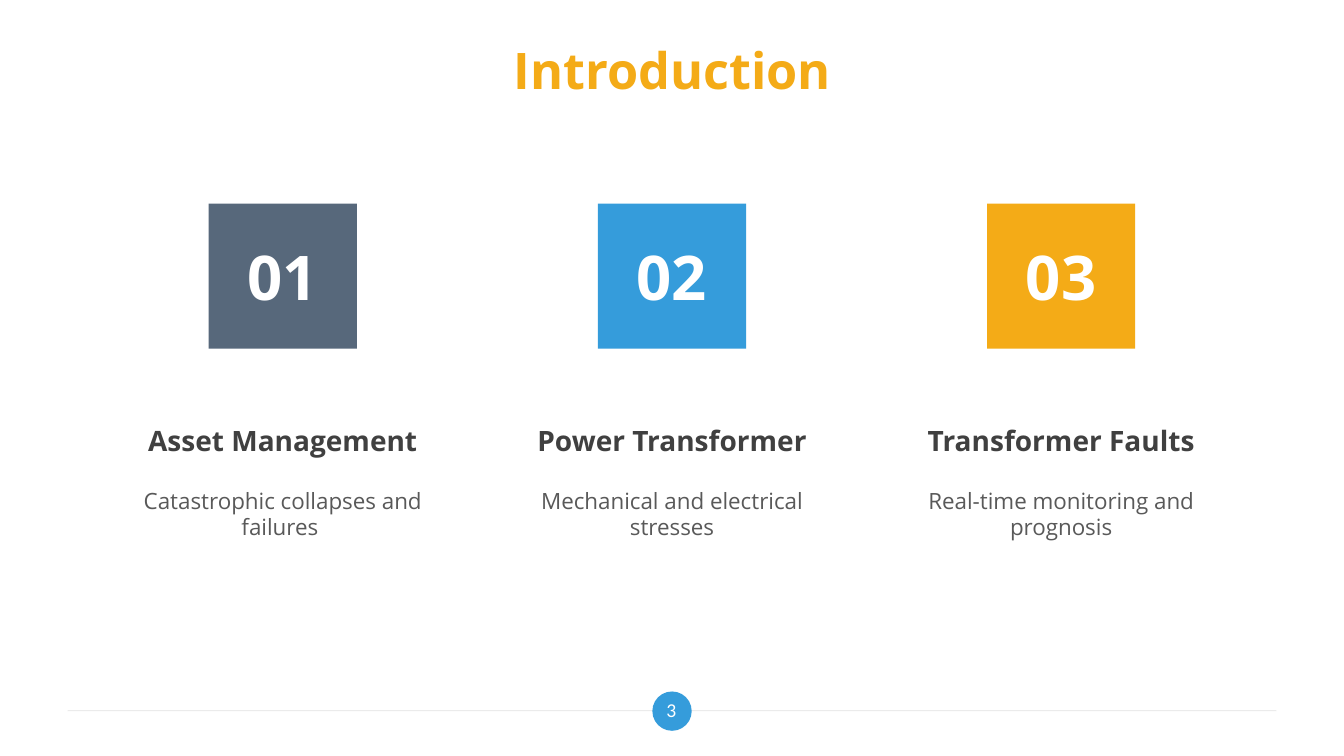
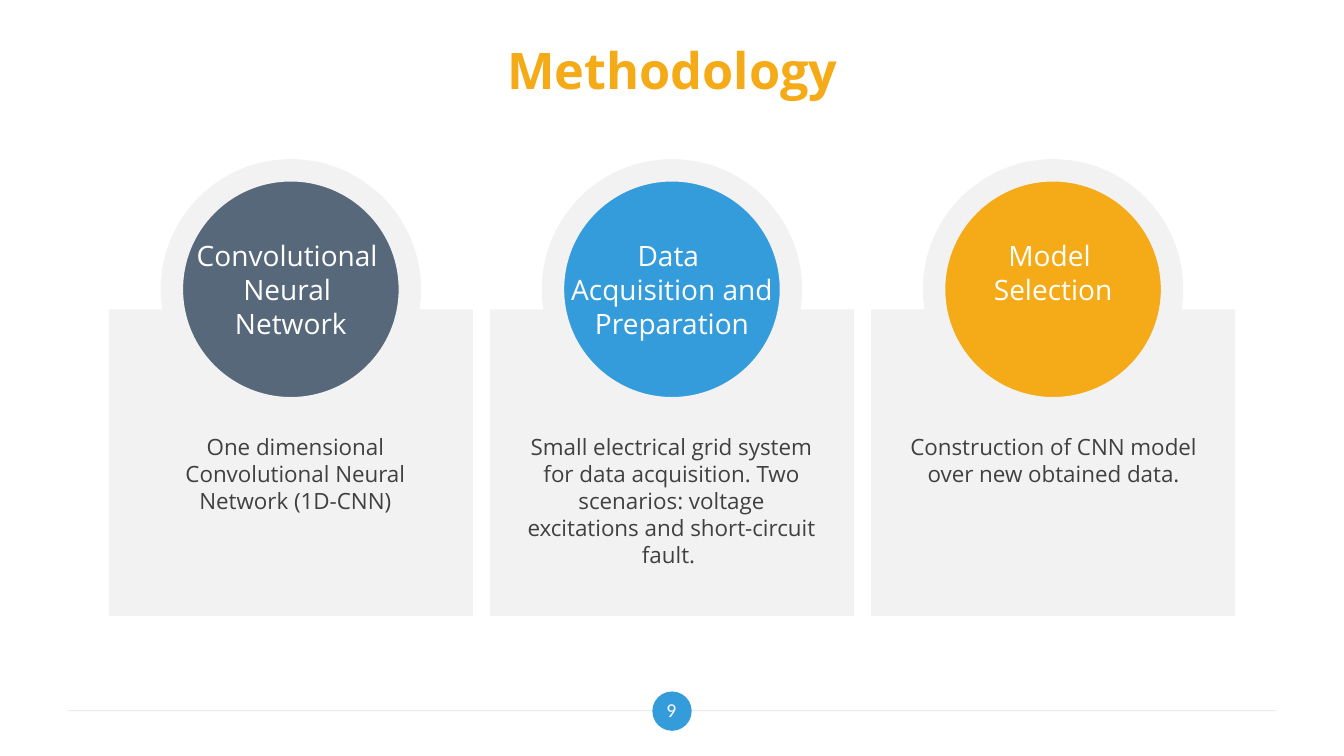
"""Build the introduction and methodology slides."""
from dataclasses import dataclass
from typing import Any

import lxml.etree
import pptx
import pptx.dml.color
import pptx.enum.shapes
import pptx.enum.text
import pptx.oxml.ns
import pptx.util

Inches = pptx.util.Inches
Pt = pptx.util.Pt
MSO_SHAPE = pptx.enum.shapes.MSO_SHAPE
ANCHOR = pptx.enum.text.MSO_ANCHOR
AUTO_SIZE = pptx.enum.text.MSO_AUTO_SIZE
Box = tuple[float, float, float, float]


@dataclass(frozen=True)
class TextStyle:
    size: float
    color: str
    bold: bool = False
    font: str = "Open Sans"


@dataclass(frozen=True)
class Theme:
    accents: tuple[str, ...] = ("57687B", "359CDB", "F4AB17")
    panel: str = "F2F2F2"
    rule: str = "D9D9D9"
    badge: str = "359CDB"
    title: TextStyle = TextStyle(36, "F4AB17", True)
    number: TextStyle = TextStyle(44, "FFFFFF", True)
    heading: TextStyle = TextStyle(20, "404040", True)
    caption: TextStyle = TextStyle(16, "595959")
    label: TextStyle = TextStyle(20, "FFFFFF")
    body: TextStyle = TextStyle(16, "404040")
    page: TextStyle = TextStyle(14, "FFFFFF", font="Calibri")


@dataclass(frozen=True)
class Topic:
    heading: str
    caption: str


@dataclass(frozen=True)
class Step:
    label: tuple[str, ...]
    label_width: float
    body: str
    body_left: float
    body_height: float


THEME = Theme()
WIDE_INSETS = {
    "margin_left": Inches(0.13),
    "margin_right": Inches(0.13),
    "margin_top": Inches(0.07),
    "margin_bottom": Inches(0.07),
    "vertical_anchor": ANCHOR.MIDDLE,
}
GROW = {"auto_size": AUTO_SIZE.SHAPE_TO_FIT_TEXT}

TOPICS = (
    Topic("Asset Management", "Catastrophic collapses and failures "),
    Topic("Power Transformer", "Mechanical and electrical stresses"),
    Topic("Transformer Faults", "Real-time monitoring and prognosis"),
)
STEPS = (
    Step(("Convolutional ", "Neural ", "Network"), 2.08,
         "One dimensional Convolutional Neural Network (1D-CNN)", 1.4, 0.91),
    Step(("Data ", "Acquisition and", "Preparation"), 2.21,
         "Small electrical grid system for data acquisition. Two scenarios: "
         "voltage excitations and short-circuit fault. ", 5.13, 1.45),
    Step(("Model ", "Selection"), 1.39,
         "Construction of CNN model over new obtained data.", 8.92, 0.64),
)


def rgb(color: str) -> pptx.dml.color.RGBColor:
    """Return the colour for a hex string."""
    return pptx.dml.color.RGBColor.from_string(color)


def set_attributes(target: Any, values: dict[str, Any]) -> None:
    """Set every named attribute on the target."""
    for name, value in values.items():
        setattr(target, name, value)


def write(tf: Any, lines: tuple[str, ...], style: TextStyle, **frame: Any) -> None:
    """Write centred paragraphs in one style."""
    set_attributes(tf, {"word_wrap": True, "auto_size": AUTO_SIZE.NONE} | frame)
    for i, line in enumerate(lines):
        p = tf.paragraphs[0] if i == 0 else tf.add_paragraph()
        p.alignment = pptx.enum.text.PP_ALIGN.CENTER
        r = p.add_run()
        r.text = line
        set_attributes(r.font, {"size": Pt(style.size), "bold": style.bold, "name": style.font})
        r.font.color.rgb = rgb(style.color)


def add_text(s: Any, box: Box, lines: tuple[str, ...], style: TextStyle, **frame: Any) -> None:
    """Add a text box."""
    sp = s.shapes.add_textbox(*map(Inches, box))
    write(sp.text_frame, lines, style, **frame)


def add_block(s: Any, kind: Any, box: Box, fill: str, outline: float = 0) -> Any:
    """Add a filled shape with an optional panel-coloured outline."""
    sp = s.shapes.add_shape(kind, *map(Inches, box))
    sp.shadow.inherit = False
    sp.fill.solid()
    sp.fill.fore_color.rgb = rgb(fill)
    if outline:
        sp.line.color.rgb = rgb(THEME.panel)
        sp.line.width = Pt(outline)
    else:
        sp.line.fill.background()
    return sp


def add_rule(s: Any) -> None:
    """Add the half-transparent footer line."""
    line = s.shapes.add_connector(
        pptx.enum.shapes.MSO_CONNECTOR.STRAIGHT,
        Inches(0.67), Inches(7.05), Inches(12.66), Inches(7.05))
    line.line.color.rgb = rgb(THEME.rule)
    line.line.width = Pt(0.75)
    qn = pptx.oxml.ns.qn
    sp_pr = line._element.spPr
    lxml.etree.SubElement(sp_pr.find(".//" + qn("a:srgbClr")), qn("a:alpha"), val="50000")
    lxml.etree.SubElement(sp_pr, qn("a:effectLst"))


def add_slide(prs: Any, title: str, page: int) -> Any:
    """Add a slide with the shared title and footer."""
    s = prs.slides.add_slide(prs.slide_layouts.get_by_name("Title Only"))
    add_rule(s)
    add_block(s, MSO_SHAPE.OVAL, (6.47, 6.86, 0.39, 0.39), THEME.badge)
    add_text(s, (6.38, 6.83, 0.56, 0.42), (str(page),), THEME.page, **WIDE_INSETS)
    sp = s.shapes.title
    set_attributes(sp, {"left": Inches(0.67), "top": Inches(0.3),
                        "width": Inches(12), "height": Inches(0.78)})
    write(sp.text_frame, (title,), THEME.title, **WIDE_INSETS)
    return s


def add_topic(s: Any, i: int, topic: Topic) -> None:
    """Add one numbered topic column."""
    left = 1.31 + 3.86 * i
    sp = add_block(s, MSO_SHAPE.RECTANGLE, (left + 0.76, 2.02, 1.47, 1.44), THEME.accents[i])
    write(sp.text_frame, (f"{i + 1:02}",), THEME.number, vertical_anchor=ANCHOR.MIDDLE)
    add_text(s, (left, 4.15, 2.99, 0.44), (topic.heading,), THEME.heading, **GROW)
    add_text(s, (left, 4.78, 2.99, 0.64), (topic.caption,), THEME.caption, **GROW)


def add_step(s: Any, i: int, step: Step) -> None:
    """Add one method card with its circle and texts."""
    width, diameter = 3.61, 2.36
    left = 1.08 + 3.78 * i
    center = left + width / 2
    add_block(s, MSO_SHAPE.RECTANGLE, (left, 3.07, width, 3.04), THEME.panel)
    add_block(s, MSO_SHAPE.OVAL, (center - diameter / 2, 1.69, diameter, diameter),
              THEME.accents[i], outline=16)
    label_box = (center - step.label_width / 2, 2.32,
                 step.label_width, 0.1 + 0.34 * len(step.label))
    add_text(s, label_box, step.label, THEME.label, word_wrap=False, **GROW)
    add_text(s, (step.body_left, 4.25, 3.06, step.body_height), (step.body,), THEME.body, **GROW)


def main() -> None:
    """Build and save the presentation."""
    prs = pptx.Presentation()
    set_attributes(prs, {"slide_width": Inches(13.33), "slide_height": Inches(7.5)})
    s = add_slide(prs, "Introduction", 3)
    for i, topic in enumerate(TOPICS):
        add_topic(s, i, topic)
    s = add_slide(prs, "Methodology", 9)
    for i, step in enumerate(STEPS):
        add_step(s, i, step)
    prs.save("out.pptx")


if __name__ == "__main__":
    main()
